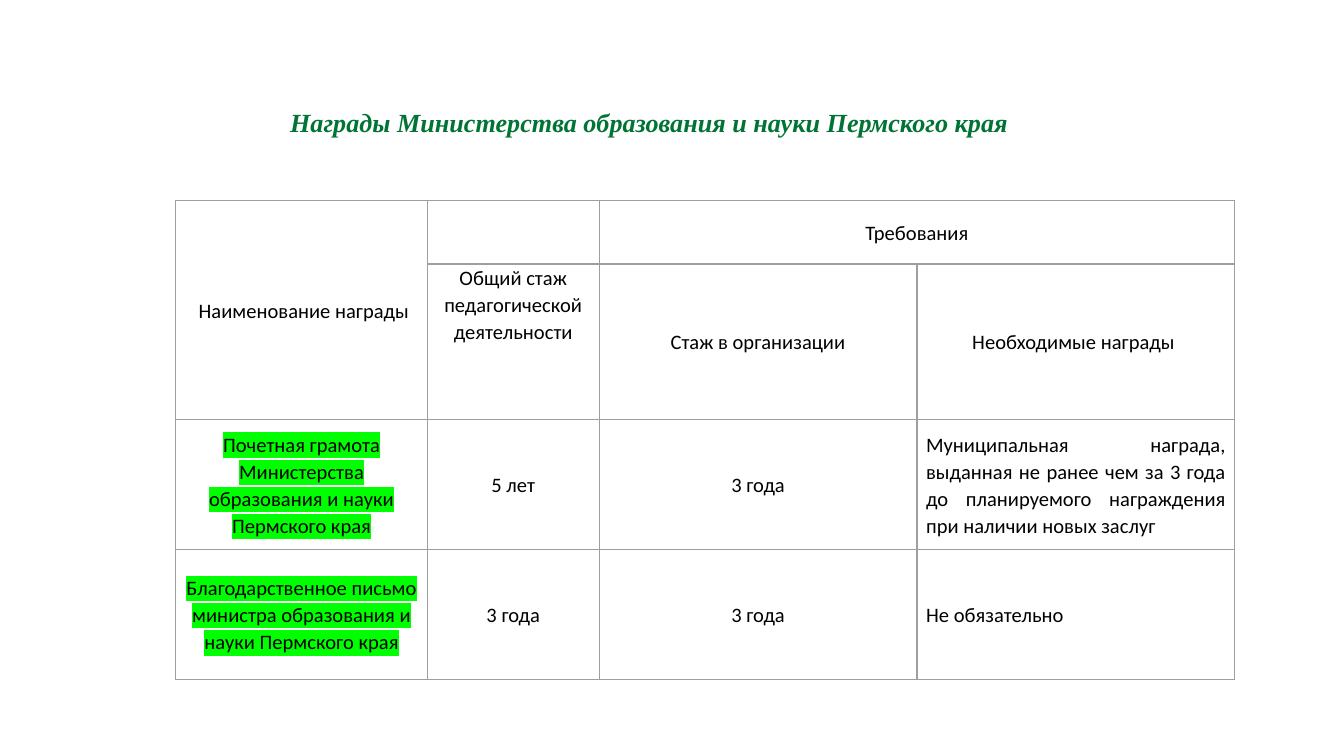
import pptx
import pptx.dml.color
import pptx.enum.text
import pptx.oxml
import pptx.oxml.ns
import pptx.util
import lxml.etree

Pt = pptx.util.Pt
ALIGN = pptx.enum.text.PP_ALIGN
ANCHOR = pptx.enum.text.MSO_ANCHOR
qn = pptx.oxml.ns.qn

COLORS = {"title": "007434", "text": "000000", "border": "9E9E9E", "highlight": "00FF00"}

COLUMN_WIDTHS = [134.8, 92, 170.3, 170.3]
ROW_HEIGHTS = [34, 83.5, 69.7, 69.7]
ROWS = [
    [" Наименование награды", "", "Требования", ""],
    ["", "Общий стаж педагогической деятельности", "Стаж в организации", "Необходимые награды "],
    ["Почетная грамота Министерства образования и науки Пермского края", "5 лет", "3 года",
     "Муниципальная награда, выданная не ранее чем за 3 года до планируемого награждения "
     "при наличии новых заслуг"],
    ["Благодарственное письмо министра образования и науки Пермского края", "3 года", "3 года",
     "Не обязательно"],
]
HEADER_ROWS = 2
MERGES = [((0, 0), (1, 0)), ((0, 2), (0, 3))]


class SlideBuilder:
    def __init__(self, slide):
        self.slide = slide

    def style_font(self, font, name, size, color):
        font.name = name
        font.size = Pt(size)
        font.color.rgb = pptx.dml.color.RGBColor.from_string(COLORS[color])

    def add_title(self, text, left, top, width, height):
        shape = self.slide.shapes.add_textbox(Pt(left), Pt(top), Pt(width), Pt(height))
        frame = shape.text_frame
        frame.word_wrap = False
        frame.auto_size = pptx.enum.text.MSO_AUTO_SIZE.SHAPE_TO_FIT_TEXT
        frame.vertical_anchor = ANCHOR.MIDDLE
        paragraph = frame.paragraphs[0]
        paragraph.text = text
        self.style_font(paragraph.font, "Times New Roman", 14, "title")
        paragraph.font.bold = True
        paragraph.font.italic = True

    def add_color(self, parent, color):
        lxml.etree.SubElement(parent, qn("a:srgbClr"), val=COLORS[color])

    def add_borders(self, cell):
        properties = cell._tc.get_or_add_tcPr()
        for side in ("lnL", "lnR", "lnT", "lnB"):
            line = lxml.etree.SubElement(properties, qn(f"a:{side}"), w=str(Pt(0.75)))
            self.add_color(lxml.etree.SubElement(line, qn("a:solidFill")), "border")

    def fill_cell(self, cell, text, alignment, anchor, highlighted):
        cell.margin_left = cell.margin_right = Pt(4.9)
        cell.margin_top = cell.margin_bottom = 0
        cell.vertical_anchor = anchor
        self.add_borders(cell)
        cell.fill.background()
        paragraph = cell.text_frame.paragraphs[0]
        paragraph.alignment = alignment
        paragraph.line_spacing = 1.07
        self.style_font(paragraph.font, "Calibri", 11, "text")
        if text:
            run = paragraph.add_run()
            run.text = text
            if highlighted:
                properties = run._r.get_or_add_rPr()
                self.add_color(lxml.etree.SubElement(properties, qn("a:highlight")), "highlight")

    def add_table(self, rows, left, top):
        shape = self.slide.shapes.add_table(
            len(rows), len(COLUMN_WIDTHS), Pt(left), Pt(top),
            Pt(sum(COLUMN_WIDTHS)), Pt(sum(ROW_HEIGHTS)))
        table = shape.table
        table.first_row = False
        table.horz_banding = False
        for column, width in zip(table.columns, COLUMN_WIDTHS):
            column.width = Pt(width)
        for row, height in zip(table.rows, ROW_HEIGHTS):
            row.height = Pt(height)
        for start, end in MERGES:
            table.cell(*start).merge(table.cell(*end))
        for i, texts in enumerate(rows):
            for j, text in enumerate(texts):
                body = i >= HEADER_ROWS
                alignment = ALIGN.JUSTIFY if body and j == 3 else ALIGN.CENTER
                anchor = ANCHOR.TOP if (i, j) == (1, 1) else ANCHOR.MIDDLE
                self.fill_cell(table.cell(i, j), text, alignment, anchor, body and j == 0)


def main():
    presentation = pptx.Presentation()
    presentation.slide_width = Pt(720)
    presentation.slide_height = Pt(405)
    builder = SlideBuilder(presentation.slides.add_slide(presentation.slide_layouts[6]))
    builder.add_table(ROWS, 94.2, 107.4)
    builder.add_title("Награды Министерства образования и науки Пермского края",
                      148.3, 53.5, 402.5, 24.2)
    presentation.save("out.pptx")


if __name__ == "__main__":
    main()
